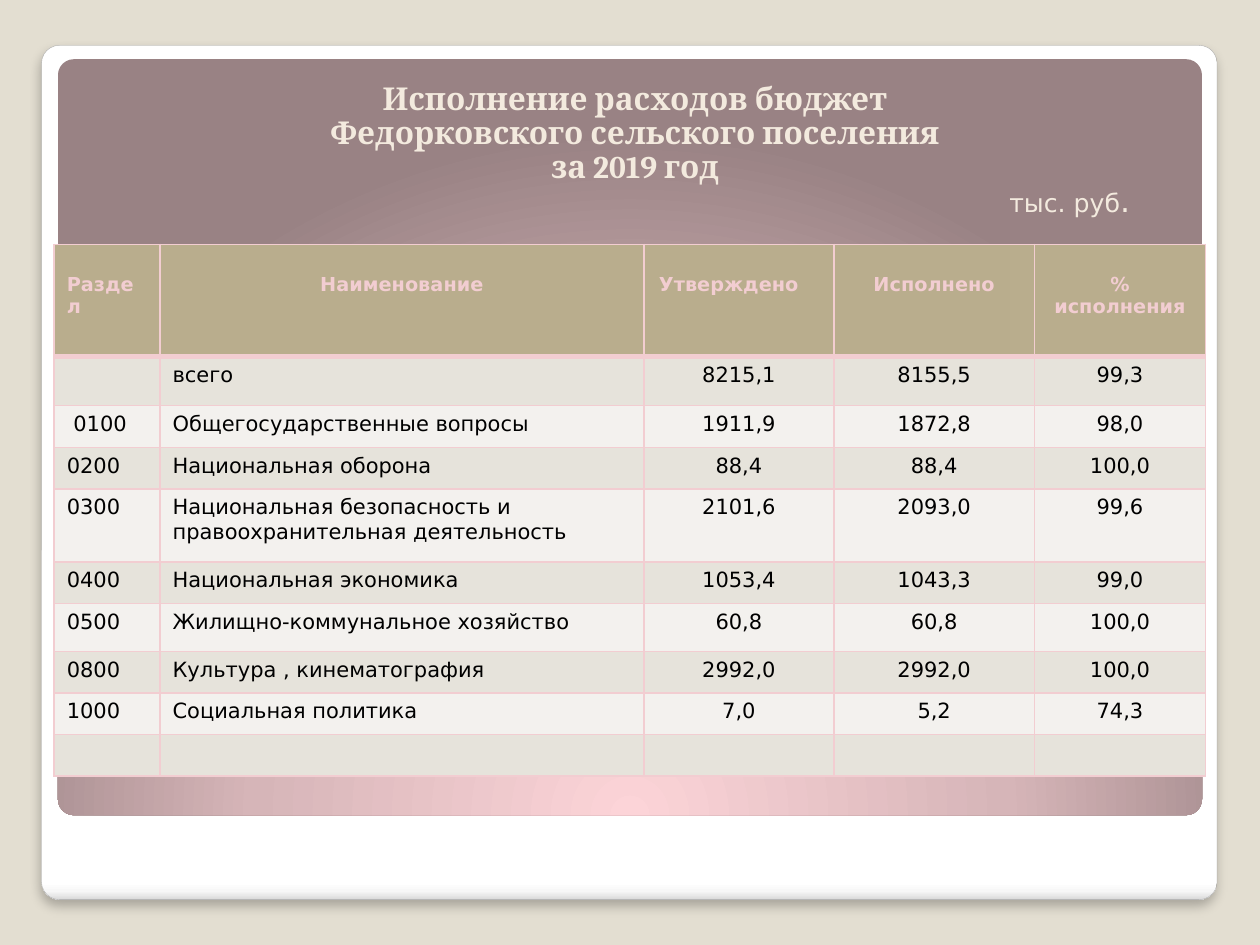
from dataclasses import dataclass

from pptx import Presentation
from pptx.dml.color import RGBColor
from pptx.enum.shapes import MSO_SHAPE as Shape
from pptx.enum.text import MSO_ANCHOR as Anchor, MSO_AUTO_SIZE as AutoSize, PP_ALIGN as Align
from pptx.oxml import parse_xml
from pptx.oxml.ns import nsdecls, qn
from pptx.util import Inches, Pt


@dataclass(frozen=True)
class Theme:
    background: str = "E3DED1"
    frame_stops: tuple = ((0, "FFFFFF"), (98, "FFFFFF"), (99, "F7F7F7"), (100, "DADADA"))
    frame_line: str = "A4A4A4"
    panel_stops: tuple = ((0, "FCD4D8"), (55, "D6B5B8"), (100, "998284"))
    title: str = "F3EADE"
    header_fill: str = "B9AD8D"
    border: str = "F2CDD1"
    bands: tuple = ("E6E3DB", "F3F1EE")
    text: str = "000000"
    title_font: str = "Cambria"
    body_font: str = "DejaVu Sans"
    title_size: float = 18
    unit_size: float = 14.4
    header_size: float = 11
    body_size: float = 12


THEME = Theme()
LINEAR = '<a:lin ang="5400000" scaled="0"/>'
CIRCLE = ('<a:path path="circle">'
          '<a:fillToRect l="50000" t="175000" r="50000" b="-75000"/></a:path>')

TITLE_LINES = ("Исполнение расходов бюджет", "Федорковского сельского поселения", "за 2019 год")
HEADINGS = ("Раздел", "Наименование", "Утверждено", "Исполнено", "% исполнения")
EXPENSES = (
    ("", "всего", "8215,1", "8155,5", "99,3"),
    (" 0100", "Общегосударственные вопросы", "1911,9", "1872,8", "98,0"),
    ("0200", "Национальная оборона", "88,4", "88,4", "100,0"),
    ("0300", "Национальная безопасность и правоохранительная деятельность",
     "2101,6", "2093,0", "99,6"),
    ("0400", "Национальная экономика", "1053,4", "1043,3", "99,0"),
    ("0500", "Жилищно-коммунальное хозяйство", "60,8", "60,8", "100,0"),
    ("0800", "Культура , кинематография", "2992,0", "2992,0", "100,0"),
    ("1000", "Социальная политика", "7,0", "5,2", "74,3"),
    ("",) * 5,
)
COLUMN_WIDTHS = (0.84, 3.84, 1.51, 1.59, 1.36)
ROW_HEIGHTS = (0.89, 0.39, 0.33, 0.33, 0.58, 0.33, 0.38, 0.33, 0.33, 0.33)


def style_run(run, font, size, color, bold=False):
    run.font.name = font
    run.font.size = Pt(size)
    run.font.bold = bold
    run.font.color.rgb = RGBColor.from_string(color)


def add_panel(slide, box, stops, direction):
    """Rounded panel with a gradient fill."""
    panel = slide.shapes.add_shape(Shape.ROUNDED_RECTANGLE, *map(Inches, box))
    panel.adjustments[0] = 0.021
    panel.shadow.inherit = False
    panel.line.fill.background()
    panel.fill.solid()
    gradient = "".join(f'<a:gs pos="{pos * 1000}"><a:srgbClr val="{color}"/></a:gs>'
                       for pos, color in stops)
    properties = panel._element.spPr
    properties.replace(properties.find(qn("a:solidFill")), parse_xml(
        f'<a:gradFill {nsdecls("a")} rotWithShape="1"><a:gsLst>{gradient}</a:gsLst>'
        f'{direction}</a:gradFill>'))
    return panel


def add_backdrop(slide, box):
    """White frame with a soft shadow, and the pink panel inside it."""
    left, top, width, height = box
    frame = add_panel(slide, box, THEME.frame_stops, LINEAR)
    frame.line.color.rgb = RGBColor.from_string(THEME.frame_line)
    frame.line.width = Pt(0.16)
    frame._element.spPr.find(qn("a:effectLst")).append(parse_xml(
        f'<a:outerShdw {nsdecls("a")} blurRad="{Pt(6)}" dist="{Pt(4)}" dir="5400000" '
        'algn="tl" rotWithShape="0"><a:srgbClr val="000000"><a:alpha val="25000"/>'
        '</a:srgbClr></a:outerShdw>'))
    add_panel(slide, (left + 0.13, top + 0.11, width - 0.25, height - 0.78),
              THEME.panel_stops, CIRCLE)


def fill_title(slide, box):
    """Three centred lines and the unit of measure on the right."""
    title = slide.shapes.title
    title.left, title.top, title.width, title.height = map(Inches, box)
    slide.shapes._spTree.append(title._element)  # in front of the backdrop
    frame = title.text_frame
    frame.auto_size = AutoSize.NONE
    frame.vertical_anchor = Anchor.BOTTOM
    frame.text = "\n".join(TITLE_LINES + ("тыс. руб",))
    for paragraph in frame.paragraphs:
        paragraph.alignment = Align.CENTER
        paragraph.line_spacing = 0.9
        style_run(paragraph.runs[0], THEME.title_font, THEME.title_size, THEME.title, True)
    heading, unit = frame.paragraphs[0], frame.paragraphs[-1]
    heading._p.get_or_add_pPr().set("marL", str(Inches(0.4)))
    unit.alignment = Align.RIGHT
    unit._p.get_or_add_pPr().set("marR", str(Inches(0.26)))
    style_run(unit.runs[0], THEME.body_font, THEME.unit_size, THEME.title)
    full_stop = unit.add_run()
    full_stop.text = "."
    style_run(full_stop, THEME.body_font, THEME.title_size, THEME.title)


def set_borders(cell, top, bottom):
    properties = cell._tc.get_or_add_tcPr()
    widths = {"lnL": 1, "lnR": 1, "lnT": top, "lnB": bottom}
    for position, (side, width) in enumerate(widths.items()):
        properties.insert(position, parse_xml(
            f'<a:{side} {nsdecls("a")} w="{Pt(width)}"><a:solidFill>'
            f'<a:srgbClr val="{THEME.border}"/></a:solidFill></a:{side}>'))


def fill_cell(cell, text, row, column):
    is_header = row == 0
    fill = THEME.header_fill if is_header else THEME.bands[(row - 1) % 2]
    size = THEME.header_size if is_header else THEME.body_size
    cell.fill.solid()
    cell.fill.fore_color.rgb = RGBColor.from_string(fill)
    set_borders(cell, 3 if row == 1 else 1, 3 if is_header else 1)
    if is_header:
        cell.margin_top = Inches(0.23)
    cell.text_frame.text = text
    paragraph = cell.text_frame.paragraphs[0]
    centred = column > 1 or (is_header and column == 1)
    paragraph.alignment = Align.CENTER if centred else Align.LEFT
    for run in paragraph.runs:
        style_run(run, THEME.body_font, size,
                  THEME.border if is_header else THEME.text, is_header)
    if not text:  # keeps an empty row from growing
        paragraph._p.append(parse_xml(f'<a:endParaRPr {nsdecls("a")} sz="{size * 100}"/>'))


def add_expense_table(slide, box):
    """Budget expenses by section."""
    rows = (HEADINGS,) + EXPENSES
    table = slide.shapes.add_table(len(rows), len(HEADINGS), *map(Inches, box)).table
    for column, width in zip(table.columns, COLUMN_WIDTHS):
        column.width = Inches(width)
    for row, height in zip(table.rows, ROW_HEIGHTS):
        row.height = Inches(height)
    for r, values in enumerate(rows):
        for c, text in enumerate(values):
            fill_cell(table.cell(r, c), text, r, c)
    table.cell(0, 2).margin_right = Inches(0.26)


def main():
    deck = Presentation()
    deck.slide_width, deck.slide_height = Inches(10), Inches(7.5)
    slide = deck.slides.add_slide(deck.slide_layouts[5])
    slide.background.fill.solid()
    slide.background.fill.fore_color.rgb = RGBColor.from_string(THEME.background)
    add_backdrop(slide, (0.33, 0.36, 9.33, 6.78))
    fill_title(slide, (0.35, 0.92, 8.98, 0.87))
    add_expense_table(slide, (0.43, 1.94, 9.13, 4.22))
    deck.save("out.pptx")


if __name__ == "__main__":
    main()
